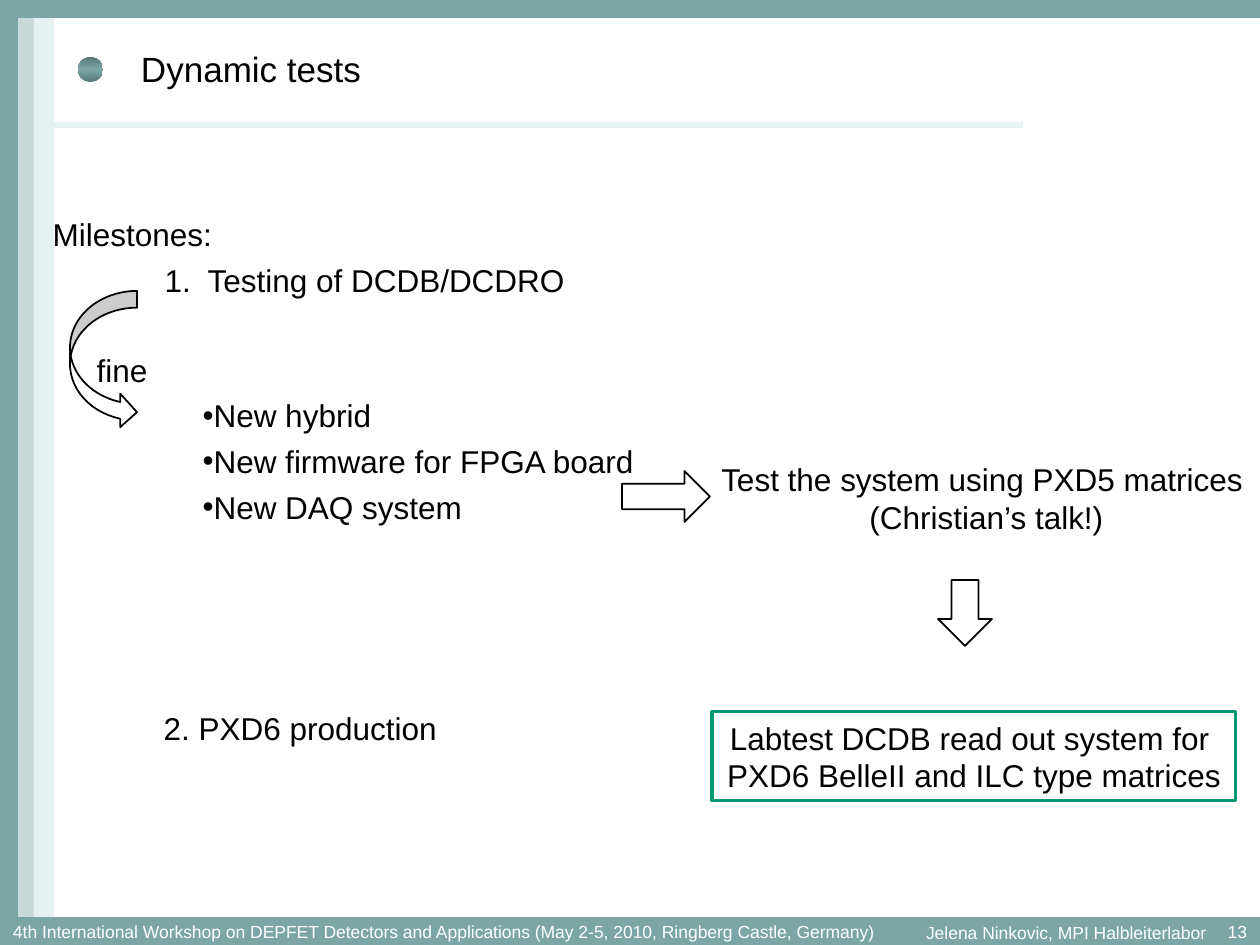
import copy

import lxml.etree
import pptx
import pptx.dml.color
import pptx.enum.shapes
import pptx.enum.text
import pptx.oxml.ns
import pptx.util

RGBColor = pptx.dml.color.RGBColor
TEAL = RGBColor(0x7C, 0xA6, 0xA6)
DARK_TEAL = RGBColor(0x59, 0x77, 0x77)
MIST = RGBColor(0xC9, 0xDB, 0xD8)
PALE = RGBColor(0xE6, 0xF2, 0xF2)
GREEN = RGBColor(0x00, 0x99, 0x73)
BLACK = RGBColor(0, 0, 0)
WHITE = RGBColor(0xFF, 0xFF, 0xFF)
PX = 914400 // 126
SHAPE = pptx.enum.shapes.MSO_SHAPE
ALIGN = pptx.enum.text.PP_ALIGN
MIDDLE = pptx.enum.text.MSO_ANCHOR.MIDDLE
NO_FIT = pptx.enum.text.MSO_AUTO_SIZE.NONE
qn = pptx.oxml.ns.qn


def set_font(paragraph, size, color):
    paragraph.font.name = "Arial"
    paragraph.font.size = pptx.util.Pt(size)
    paragraph.font.color.rgb = color


def add_outline(kind, box, fill, line, width):
    shape = slide.shapes.add_shape(kind, *[v * PX for v in box])
    shape.shadow.inherit = False
    if fill is None:
        shape.fill.background()
    else:
        shape.fill.solid()
        shape.fill.fore_color.rgb = fill
    shape.line.color.rgb = line
    shape.line.width = pptx.util.Pt(width)
    return shape


deck = pptx.Presentation()
deck.slide_width = 1260 * PX
deck.slide_height = 945 * PX
slide = deck.slides.add_slide(deck.slide_layouts[1])

for box, color in [
    ((17, 0, 18, 918), MIST),
    ((35, 0, 18, 945), PALE),
    ((0, 918, 1260, 30), TEAL),
    ((0, 0, 17, 918), TEAL),
    ((0, -4, 1260, 21), TEAL),
]:
    add_outline(SHAPE.RECTANGLE, box, color, color, 0.75)

title_rule = slide.shapes.add_connector(
    pptx.enum.shapes.MSO_CONNECTOR.STRAIGHT, 40 * PX, 125 * PX, 1023 * PX, 125 * PX)
title_rule.line.color.rgb = PALE
title_rule.line.width = pptx.util.Pt(3)
lxml.etree.SubElement(title_rule._element.spPr, qn("a:effectLst"))

title_dot = add_outline(SHAPE.OVAL, (78, 57, 25, 25), TEAL, TEAL, 0.75)
title_dot.line.fill.background()
title_dot.fill.gradient()
title_dot.fill.gradient_angle = 90
stop_list = title_dot._element.spPr.find(qn("a:gradFill")).find(qn("a:gsLst"))
stop_list.append(copy.deepcopy(stop_list[0]))
for stop, position, color in zip(
        title_dot.fill.gradient_stops, (0, 0.5, 1), (DARK_TEAL, TEAL, DARK_TEAL)):
    stop.position = position
    stop.color.rgb = color

title = slide.shapes.title
title.left, title.top, title.width, title.height = [v * PX for v in (53, 26, 1071, 85)]
title.text_frame.text = "Dynamic tests"
title.text_frame.auto_size = NO_FIT
title.text_frame.vertical_anchor = MIDDLE
title.text_frame.margin_left = 88 * PX
title.text_frame.paragraphs[0].alignment = ALIGN.LEFT
set_font(title.text_frame.paragraphs[0], 20, BLACK)

milestones = slide.placeholders[1]
milestones.left, milestones.top, milestones.width, milestones.height = [
    v * PX for v in (40, 209, 1134, 620)]
milestones.text_frame.auto_size = NO_FIT
entries = [
    ("Milestones:", 0, 0, 0, False),
    ("1.\tTesting of DCDB/DCDRO", 155, -43, 4.5, False),
    ("fine", 44, 0, 29.7, False),
    ("New hybrid", 161, -11, 4.5, True),
    ("New firmware for FPGA board", 161, -11, 4.5, True),
    ("New DAQ system", 161, -11, 4.5, True),
    ("2. PXD6 production", 111, 0, 105, False),
]
milestones.text_frame.text = "\n".join(entry[0] for entry in entries)
for paragraph, (_, margin, indent, gap, bulleted) in zip(
        milestones.text_frame.paragraphs, entries):
    paragraph.space_before = pptx.util.Pt(gap)
    properties = paragraph._p.get_or_add_pPr()
    properties.set("marL", str(margin * PX))
    properties.set("indent", str(indent * PX))
    if bulleted:
        lxml.etree.SubElement(properties, qn("a:buChar")).set("char", "•")
    else:
        lxml.etree.SubElement(properties, qn("a:buNone"))
    set_font(paragraph, 18, BLACK)

for text, box, alignment in [
    ("4th International Workshop on DEPFET Detectors and Applications "
     "(May 2-5, 2010, Ringberg Castle, Germany)", (13, 919, 942, 26), ALIGN.LEFT),
    ("Jelena Ninkovic, MPI Halbleiterlabor", (883, 920, 323, 26), ALIGN.RIGHT),
    ("13", (1210, 919, 37, 26), ALIGN.RIGHT),
]:
    footer = slide.shapes.add_textbox(*[v * PX for v in box]).text_frame
    footer.margin_left = footer.margin_right = footer.margin_top = footer.margin_bottom = 0
    footer.word_wrap = True
    footer.vertical_anchor = MIDDLE
    footer.text = text
    footer.paragraphs[0].alignment = alignment
    set_font(footer.paragraphs[0], 10, WHITE)

for kind, box in [
    (SHAPE.CURVED_RIGHT_ARROW, (70, 291, 67, 138)),
    (SHAPE.DOWN_ARROW, (938, 580, 54, 66)),
    (SHAPE.RIGHT_ARROW, (622, 471, 88, 51)),
]:
    add_outline(kind, box, WHITE, BLACK, 1)

system_test = slide.shapes.add_textbox(*[v * PX for v in (706, 454, 561, 89)])
lab_test = add_outline(SHAPE.RECTANGLE, (712, 712, 524, 89), None, GREEN, 1.75)
for step, text in [
    (system_test, "Test the system using PXD5 matrices \v(Christian’s talk!)"),
    (lab_test, "Labtest DCDB read out system for \vPXD6 BelleII and ILC type matrices"),
]:
    step.text_frame.text = text
    step.text_frame.word_wrap = False
    step.text_frame.paragraphs[0].alignment = ALIGN.CENTER
    set_font(step.text_frame.paragraphs[0], 18, BLACK)

deck.save("out.pptx")
